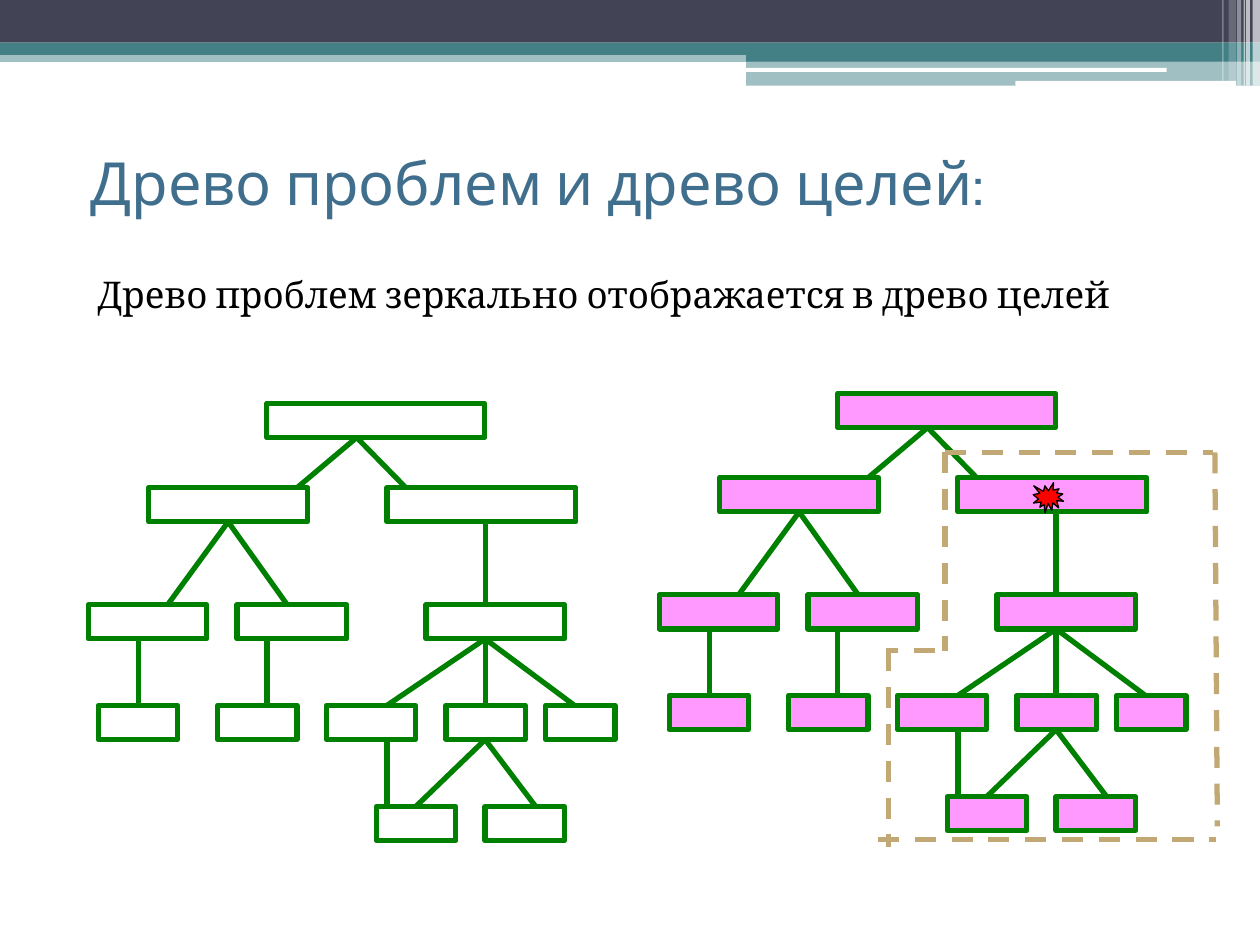
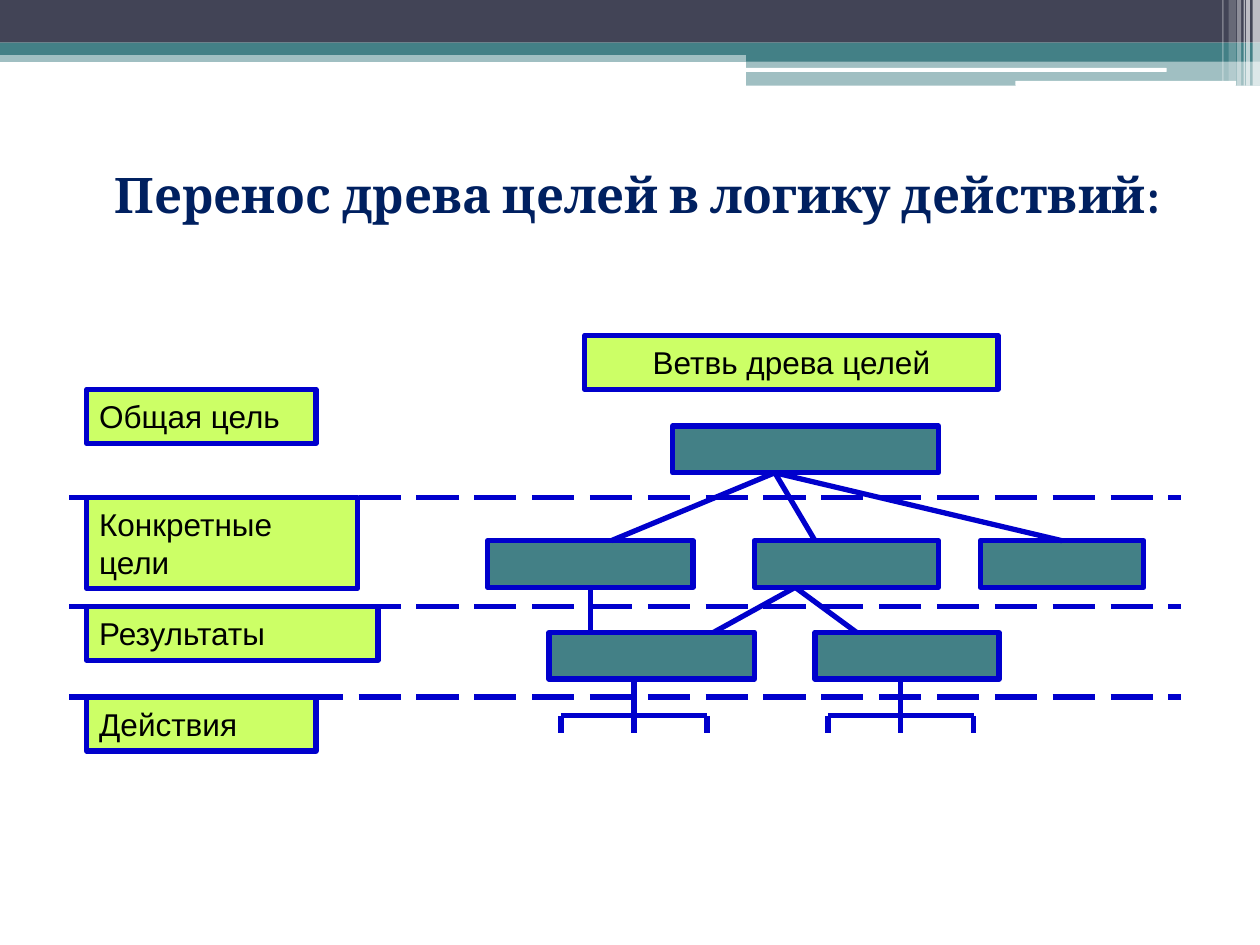
from pptx import Presentation
from pptx.dml.color import RGBColor
from pptx.enum.dml import MSO_LINE_DASH_STYLE as DASH
from pptx.enum.shapes import MSO_CONNECTOR, MSO_SHAPE as SHAPE
from pptx.enum.text import MSO_ANCHOR as ANCHOR, MSO_AUTO_SIZE, PP_ALIGN as ALIGN
from pptx.oxml.ns import qn
from pptx.util import Cm, Pt
from lxml.etree import SubElement

COLORS = {
    "navy": "424456", "teal": "438086", "white": "FFFFFF", "black": "000000",
    "heading": "406F8D", "dark_blue": "002060", "green": "008000",
    "pink": "FF99FF", "sand": "C2A874", "red": "FF0000",
    "blue": "0000CC", "lime": "CCFF66",
}

# Header bands: left, top, width, height, colour, opacity in percent
BANDS = [
    (0, 1.02, 25.4, 0.23, "teal", 50),
    (0, 0, 25.4, 0.86, "navy", 100),
    (0, 0.86, 25.4, 0.25, "teal", 100),
    (15.04, 0.99, 10.36, 0.25, "teal", 100),
    (15.04, 1.22, 10.36, 0.51, "teal", 50),
]
HIGHLIGHTS = [(15.01, 1.37, 8.51, 0.08), (20.47, 1.63, 4.45, 0.1)]
# Corner stripes: left, width, height, opacity in percent
STRIPES = [
    (25.25, 0.15, 1.73, 65), (25.12, 0.08, 1.73, 65), (25.07, 0.03, 1.73, 60),
    (24.94, 0.08, 1.73, 40), (24.77, 0.15, 1.63, 20), (24.64, 0.03, 1.63, 30),
]

# Tree levels: top, boxes (left, width), links to the next level (x above, x below)
PROBLEM_TREE = [
    (8.13, [(5.38, 4.39)], [(7.19, 5.99), (7.19, 8.18)]),
    (9.83, [(3, 3.2), (7.8, 3.81)], [(4.6, 3.38), (4.6, 5.79), (9.78, 9.78)]),
    (12.19, [(1.78, 2.39), (4.78, 2.21), (8.59, 2.79)],
     [(2.79, 2.79), (5.38, 5.38), (9.78, 7.8), (9.78, 9.78), (9.78, 11.58)]),
    (14.22, [(1.98, 1.6), (4.39, 1.6), (6.58, 1.8), (8.99, 1.6), (11, 1.4)],
     [(9.78, 8.38), (9.78, 10.8), (7.8, 7.8)]),
    (16.26, [(7.59, 1.6), (9.78, 1.6)], []),
]
GOAL_BRANCH = [
    (8.59, [(13.56, 5.36)], [(15.62, 12.32), (15.62, 16.43), (15.62, 21.41)]),
    (10.9, [(9.83, 4.14), (15.21, 3.71), (19.76, 3.3)],
     [(16.03, 14.38), (16.03, 17.27), (11.91, 11.91)]),
    (12.75, [(11.07, 4.14), (16.43, 3.71)], []),
]
# Dashed border around the chosen branch: x1, y1, x2, y2
BRANCH_BORDER = [
    (19.05, 9.12, 24.46, 9.12), (19.05, 9.12, 19.05, 13.13),
    (18.85, 13.11, 17.86, 13.11), (17.91, 13.11, 17.91, 17.07),
    (17.7, 16.92, 24.51, 16.92), (24.49, 9.12, 24.54, 16.66),
]
# Logic levels: text, top, width, height
LOGIC_LEVELS = [
    ("Общая цель", 7.85, 4.62, 1.09),
    ("Конкретные\nцели", 10.03, 5.46, 1.83),
    ("Результаты", 12.22, 5.87, 1.09),
    ("Действия", 14.05, 4.62, 1.09),
]


def rgb(color):
    return RGBColor.from_string(COLORS[color])


def add_box(slide, left, top, width, height, fill, line=None, weight=3,
            opacity=100, kind=SHAPE.RECTANGLE):
    box = slide.shapes.add_shape(kind, Cm(left), Cm(top), Cm(width), Cm(height))
    box.shadow.inherit = False
    box.fill.solid()
    box.fill.fore_color.rgb = rgb(fill)
    if opacity < 100:
        tint = box.fill._xPr.find(qn("a:solidFill"))[0]
        SubElement(tint, qn("a:alpha")).set("val", str(opacity * 1000))
    if line:
        box.line.color.rgb = rgb(line)
        box.line.width = Pt(weight)
    else:
        box.line.fill.background()
    return box


def add_line(slide, x1, y1, x2, y2, color, dash=None):
    link = slide.shapes.add_connector(
        MSO_CONNECTOR.STRAIGHT, Cm(x1), Cm(y1), Cm(x2), Cm(y2))
    link.line.color.rgb = rgb(color)
    link.line.width = Pt(3)
    if dash:
        link.line.dash_style = dash
    SubElement(link._element.spPr, qn("a:effectLst"))


def style_text(frame, size, font, color, align=ALIGN.LEFT, bold=False):
    for paragraph in frame.paragraphs:
        paragraph.alignment = align
        paragraph.font.size = Pt(size)
        paragraph.font.name = font
        paragraph.font.bold = bold
        paragraph.font.color.rgb = rgb(color)


def fill_placeholder(holder, text, left, top, width, height, anchor, **style):
    holder.left, holder.top = Cm(left), Cm(top)
    holder.width, holder.height = Cm(width), Cm(height)
    frame = holder.text_frame
    frame.text = text
    frame.word_wrap = True
    frame.auto_size = MSO_AUTO_SIZE.NONE
    frame.vertical_anchor = anchor
    style_text(frame, **style)
    return frame


def indent_first_line(frame):
    """Hanging indent without a bullet."""
    paragraph = frame.paragraphs[0]
    paragraph.space_before = Pt(3)
    properties = paragraph._p.get_or_add_pPr()
    properties.set("marL", str(Cm(1.02)))
    properties.set("indent", str(Cm(-0.71)))
    SubElement(properties, qn("a:buNone"))
    # The bullet setting must stand before the run defaults
    defaults = properties.find(qn("a:defRPr"))
    if defaults is not None:
        properties.append(defaults)


def add_label(slide, text, left, top, width, height, align=ALIGN.LEFT):
    label = add_box(slide, left, top, width, height, "lime", "blue")
    frame = label.text_frame
    frame.text = text
    frame.word_wrap = True
    frame.vertical_anchor = ANCHOR.MIDDLE
    style_text(frame, 18, "Arial", "black", align)


def add_header(slide):
    for left, top, width, height, color, opacity in BANDS:
        add_box(slide, left, top, width, height, color, opacity=opacity)
    for place in HIGHLIGHTS:
        add_box(slide, *place, "white", kind=SHAPE.ROUNDED_RECTANGLE)
    for left, width, height, opacity in STRIPES:
        add_box(slide, left, 0, width, height, "white", opacity=opacity)


def add_tree(slide, levels, box_height, fill, line, dx=0, dy=0):
    for top, boxes, _ in levels:
        for left, width in boxes:
            add_box(slide, left + dx, top + dy, width, box_height, fill, line)
    for (top, _, links), (next_top, _, _) in zip(levels, levels[1:]):
        for above, below in links:
            add_line(slide, above + dx, top + box_height + dy,
                     below + dx, next_top + dy, line)


def add_action_fork(slide, trunk):
    """Three prongs that hang from a result."""
    arm, bar, tip = 1.47, 14.43, 14.78
    add_line(slide, trunk, 13.69, trunk, tip, "blue")
    add_line(slide, trunk - arm, bar, trunk + arm, bar, "blue")
    for prong in (trunk - arm, trunk + arm):
        add_line(slide, prong, bar, prong, tip, "blue")


def build_trees_slide(prs):
    slide = prs.slides.add_slide(prs.slide_layouts[1])
    add_header(slide)
    fill_placeholder(slide.shapes.title, "Древо проблем и древо целей:",
                     1.57, 2.18, 22.86, 2.97, ANCHOR.MIDDLE,
                     size=34, font="Cabin", color="heading")
    statement = fill_placeholder(
        slide.placeholders[1], "Древо проблем зеркально отображается в древо целей",
        1.4, 5.36, 22.86, 12.01, ANCHOR.TOP, size=21, font="Cambria", color="black")
    indent_first_line(statement)

    # Problem tree and its mirror, the goal tree
    add_tree(slide, PROBLEM_TREE, 0.69, "white", "green")
    add_tree(slide, PROBLEM_TREE, 0.69, "pink", "green", dx=11.51, dy=-0.2)

    # Chosen branch
    for side in BRANCH_BORDER:
        add_line(slide, *side, "sand", DASH.DASH)
    add_box(slide, 20.83, 9.73, 0.61, 0.61, "red", "black", 0.75,
            kind=SHAPE.EXPLOSION1)


def build_logic_slide(prs):
    slide = prs.slides.add_slide(prs.slide_layouts[5])
    add_header(slide)
    heading = fill_placeholder(
        slide.shapes.title, "Перенос древа целей в логику действий:",
        1.19, 3.18, 23.01, 2.5, ANCHOR.TOP, size=28, font="Cambria",
        color="dark_blue", align=ALIGN.CENTER, bold=True)
    indent_first_line(heading)

    # Branch of the goal tree with its actions
    add_tree(slide, GOAL_BRANCH, 0.94, "teal", "blue")
    add_label(slide, "Ветвь древа целей", 11.79, 6.76, 8.33, 1.09, ALIGN.CENTER)
    for trunk in (12.78, 18.16):
        add_action_fork(slide, trunk)

    # Logic levels and the borders between them
    for text, top, width, height in LOGIC_LEVELS:
        add_label(slide, text, 1.75, top, width, height)
    for _, top, _, _ in LOGIC_LEVELS[1:]:
        add_line(slide, 1.4, top, 23.8, top, "blue", DASH.LONG_DASH)


def main():
    prs = Presentation()
    prs.slide_width, prs.slide_height = Cm(25.4), Cm(19.05)
    build_trees_slide(prs)
    build_logic_slide(prs)
    prs.save("out.pptx")


if __name__ == "__main__":
    main()
